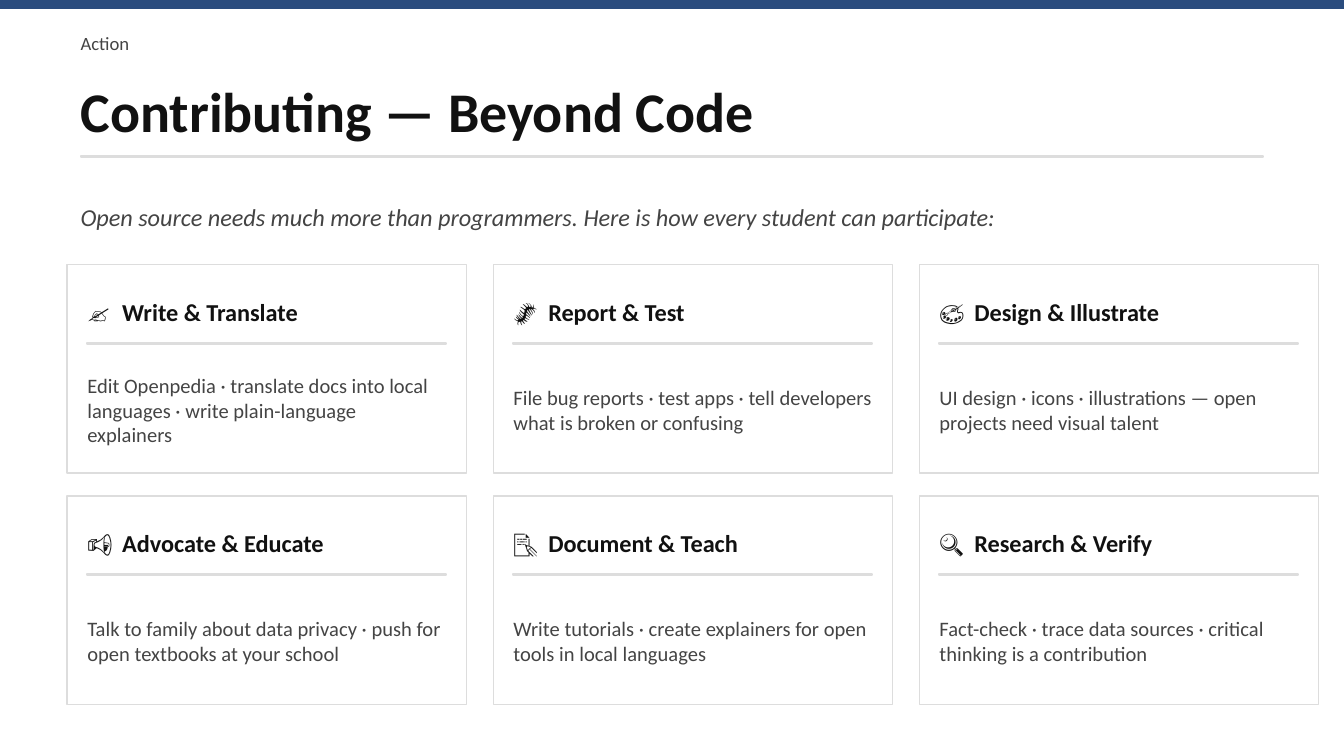
from dataclasses import dataclass

from lxml import etree
from pptx import Presentation
from pptx import util as u
from pptx.dml import color
from pptx.enum import shapes, text
from pptx.oxml import ns


@dataclass(frozen=True)
class Theme:
    font: str = "Calibri"
    paper: str = "FFFFFF"
    accent: str = "2B4C7E"
    ink: str = "111111"
    soft: str = "444444"
    rule: str = "DDDDDD"
    title: float = 30
    head: float = 13
    body: float = 11
    tag: float = 10


THEME = Theme()
CARDS = [
    ("✍", "Write & Translate",
     "Edit Openpedia · translate docs into local languages · write plain-language explainers"),
    ("🐛", "Report & Test",
     "File bug reports · test apps · tell developers what is broken or confusing"),
    ("🎨", "Design & Illustrate",
     "UI design · icons · illustrations — open projects need visual talent"),
    ("📢", "Advocate & Educate",
     "Talk to family about data privacy · push for open textbooks at your school"),
    ("📝", "Document & Teach",
     "Write tutorials · create explainers for open tools in local languages"),
    ("🔍", "Research & Verify",
     "Fact-check · trace data sources · critical thinking is a contribution"),
]


def add_rect(slide, box, fill, line, width=1):
    rect = slide.shapes.add_shape(shapes.MSO_SHAPE.RECTANGLE, *map(u.Inches, box))
    rect.shadow.inherit = False
    rect.fill.solid()
    rect.fill.fore_color.rgb = color.RGBColor.from_string(fill)
    rect.line.color.rgb = color.RGBColor.from_string(line)
    rect.line.width = u.Pt(width)


def fill_text(shape, runs, size, ink, bold=False, italic=False):
    """Write the runs into one left-aligned, vertically centred paragraph."""
    frame = shape.text_frame
    frame.word_wrap = True
    frame.auto_size = text.MSO_AUTO_SIZE.NONE
    frame.vertical_anchor = text.MSO_ANCHOR.MIDDLE
    frame.margin_left = frame.margin_right = 0
    frame.margin_top = frame.margin_bottom = 0
    para = frame.paragraphs[0]
    para.alignment = text.PP_ALIGN.LEFT
    for words in runs:
        run = para.add_run()
        run.text = words
        run.font.name = THEME.font
        run.font.size = u.Pt(size)
        run.font.bold = bold
        run.font.italic = italic
        run.font.color.rgb = color.RGBColor.from_string(ink)
    return para


def add_text(slide, box, *style, **flags):
    label = slide.shapes.add_textbox(*map(u.Inches, box))
    return fill_text(label, *style, **flags)


def set_tab(para, pos):
    tabs = etree.SubElement(para._p.get_or_add_pPr(), ns.qn("a:tabLst"))
    etree.SubElement(tabs, ns.qn("a:tab"), pos=str(u.Inches(pos)), algn="l")


def add_header(slide, box):
    left, top, width, height = box
    title = slide.shapes.title
    title.left, title.top = u.Inches(left), u.Inches(top + 0.28)
    title.width, title.height = u.Inches(width), u.Inches(0.72)
    fill_text(title, ["Contributing — Beyond Code"], THEME.title, THEME.ink, bold=True)
    add_text(slide, (left, top, width + 0.2, 0.28), ["Action"], THEME.tag, THEME.soft)
    add_rect(slide, (left, top + 0.98, width, 0.01), THEME.rule, THEME.rule)
    intro = ("Open source needs much more than programmers. "
             "Here is how every student can participate:")
    add_text(slide, (left, top + height - 0.38, width, 0.38), [intro],
             THEME.head, THEME.soft, italic=True)


def add_card(slide, box, icon, name, body):
    left, top, width, height = box
    pad = 0.15
    inner, span = left + pad, width - 2 * pad
    add_rect(slide, box, THEME.paper, THEME.rule, 0.75)
    head = add_text(slide, (inner, top + 0.14, span, 0.42), [f"{icon}\t{name}"],
                    THEME.head, THEME.ink, bold=True)
    set_tab(head, 0.26)
    add_rect(slide, (inner, top + 0.58, span, 0.01), THEME.rule, THEME.rule)
    add_text(slide, (inner, top + 0.68, span, height - 0.75), [body],
             THEME.body, THEME.soft)


def add_grid(slide, box, cards, cols=3, gap_x=0.2, gap_y=0.17):
    left, top, width, height = box
    rows = -(-len(cards) // cols)
    wide = (width - gap_x * (cols - 1)) / cols
    tall = (height - gap_y * (rows - 1)) / rows
    for i, card in enumerate(cards):
        row, col = divmod(i, cols)
        place = (left + col * (wide + gap_x), top + row * (tall + gap_y), wide, tall)
        add_card(slide, place, *card)


def main():
    deck = Presentation()
    deck.slide_width = u.Inches(10)
    deck.slide_height = deck.slide_width * 9 // 16
    slide = deck.slides.add_slide(deck.slide_layouts[5])
    slide.background.fill.solid()
    slide.background.fill.fore_color.rgb = color.RGBColor.from_string(THEME.paper)
    add_rect(slide, (0, 0, 10, 0.06), THEME.accent, THEME.accent)
    add_header(slide, (0.6, 0.18, 8.8, 1.62))
    add_grid(slide, (0.5, 1.97, 9.31, 3.27), CARDS)
    deck.save("out.pptx")


if __name__ == "__main__":
    main()
